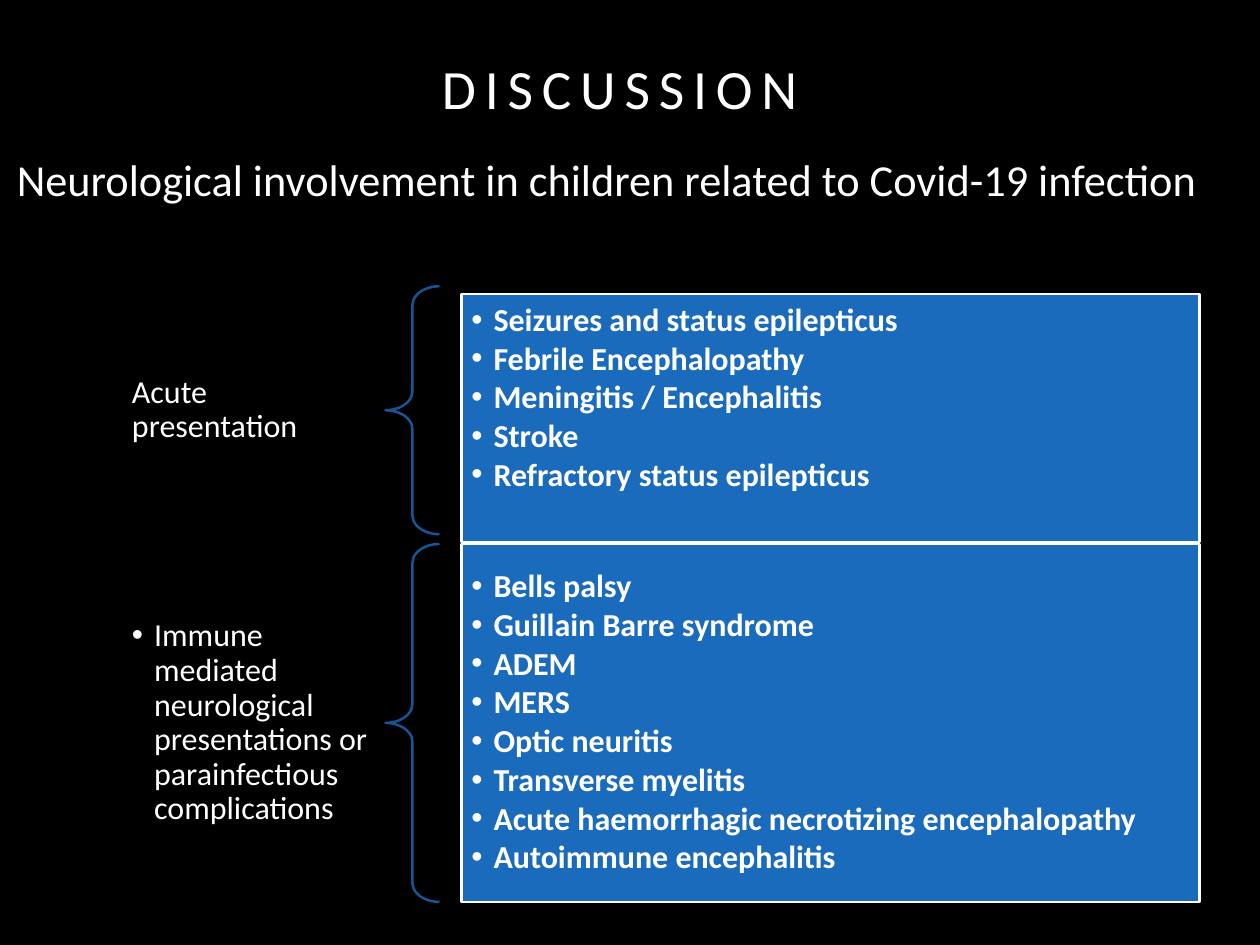
from lxml import etree
from pptx import Presentation
from pptx import util as u
from pptx.dml.color import RGBColor
from pptx.enum import shapes, text
from pptx.oxml import ns

Pt = u.Pt

# Content
TITLE = "DISCUSSION"
SUBTITLE = "Neurological involvement in children related to Covid-19 infection"
# label, label is bulleted, brace top, box top, height, bottom inset, items
GROUPS = [
    ("Acute presentation", False, 232.6, 239, 201.6, 40,
     ["Seizures and status epilepticus", "Febrile Encephalopathy",
      "Meningitis / Encephalitis", "Stroke", "Refractory status epilepticus"]),
    ("Immune mediated neurological presentations or parainfectious complications",
     True, 442.1, 442.1, 290.9, 8,
     ["Bells palsy", "Guillain Barre syndrome", "ADEM", "MERS", "Optic neuritis",
      "Transverse myelitis", "Acute haemorrhagic necrotizing encephalopathy",
      "Autoimmune encephalitis"]),
]

# Style
FONT = "Calibri"
BLACK = RGBColor(0x00, 0x00, 0x00)
WHITE = RGBColor(0xFF, 0xFF, 0xFF)
BLUE = RGBColor(0x1B, 0x6B, 0xBC)
NAVY = RGBColor(0x16, 0x56, 0x97)
BODY_SIZE = 26
INDENT = 18

# Columns: left, width
LABEL_COL = (92.9, 220.3)
BRACE_COL = (313.2, 44)
BOX_COL = (375.1, 599.8)


def set_frame(sp, insets, anchor):
    tf = sp.text_frame
    tf.word_wrap = True
    tf.margin_left, tf.margin_top, tf.margin_right, tf.margin_bottom = map(Pt, insets)
    tf.vertical_anchor = anchor
    return tf


def add_run(p, words, size, bold=False):
    r = p.add_run()
    r.text = words
    f = r.font
    f.name, f.size, f.bold = FONT, Pt(size), bold
    f.color.rgb = WHITE
    return r


def add_bullet(p):
    pPr = p._p.get_or_add_pPr()
    pPr.set("marL", str(Pt(INDENT)))
    pPr.set("indent", str(-Pt(INDENT)))
    etree.SubElement(pPr, ns.qn("a:buFont")).set("typeface", "Arial")
    etree.SubElement(pPr, ns.qn("a:buChar")).set("char", "•")


def fill_body(tf, lines, bulleted, bold):
    for i, line in enumerate(lines):
        p = tf.add_paragraph() if i else tf.paragraphs[0]
        p.alignment = text.PP_ALIGN.LEFT
        p.line_spacing = 0.9
        p.space_after = Pt(3.4)
        if bulleted:
            add_bullet(p)
        add_run(p, line, BODY_SIZE, bold)


def add_heading(s, box, words, size, align):
    tf = set_frame(s.shapes.add_textbox(*map(Pt, box)), (0, 0, 0, 0), text.MSO_ANCHOR.TOP)
    p = tf.paragraphs[0]
    p.alignment = align
    return add_run(p, words, size)


def add_outlined(s, kind, col, top, height, color):
    sp = s.shapes.add_shape(kind, Pt(col[0]), Pt(top), Pt(col[1]), Pt(height))
    sp.shadow.inherit = False
    sp.line.color.rgb = color
    sp.line.width = Pt(2)
    return sp


def add_group(s, label, bulleted, brace_top, box_top, height, bottom, items):
    # Label, centred on its brace
    left, width = LABEL_COL
    sp = s.shapes.add_textbox(Pt(left), Pt(brace_top), Pt(width), Pt(height))
    tf = set_frame(sp, (14.4, 5, 14.4, 5), text.MSO_ANCHOR.MIDDLE)
    fill_body(tf, [label], bulleted, False)

    # Brace
    sp = add_outlined(s, shapes.MSO_SHAPE.LEFT_BRACE, BRACE_COL, brace_top, height, NAVY)
    sp.fill.background()
    sp.adjustments[0] = 0.35

    # Box with its list
    sp = add_outlined(s, shapes.MSO_SHAPE.RECTANGLE, BOX_COL, box_top, height, WHITE)
    sp.fill.solid()
    sp.fill.fore_color.rgb = BLUE
    tf = set_frame(sp, (8, 8, 8, bottom), text.MSO_ANCHOR.MIDDLE)
    fill_body(tf, items, True, True)


def main():
    prs = Presentation()
    prs.slide_width, prs.slide_height = Pt(1024), Pt(768)
    s = prs.slides.add_slide(prs.slide_layouts[6])
    s.background.fill.solid()
    s.background.fill.fore_color.rgb = BLACK

    # Headings
    add_heading(s, (13.7, 123.8, 1010, 60.5), SUBTITLE, 36, text.PP_ALIGN.LEFT)
    r = add_heading(s, (35.3, 43.9, 936.7, 70.6), TITLE, 45, text.PP_ALIGN.CENTER)
    r._r.get_or_add_rPr().set("spc", "720")

    # Groups
    for group in GROUPS:
        add_group(s, *group)

    prs.save("out.pptx")


if __name__ == "__main__":
    main()
